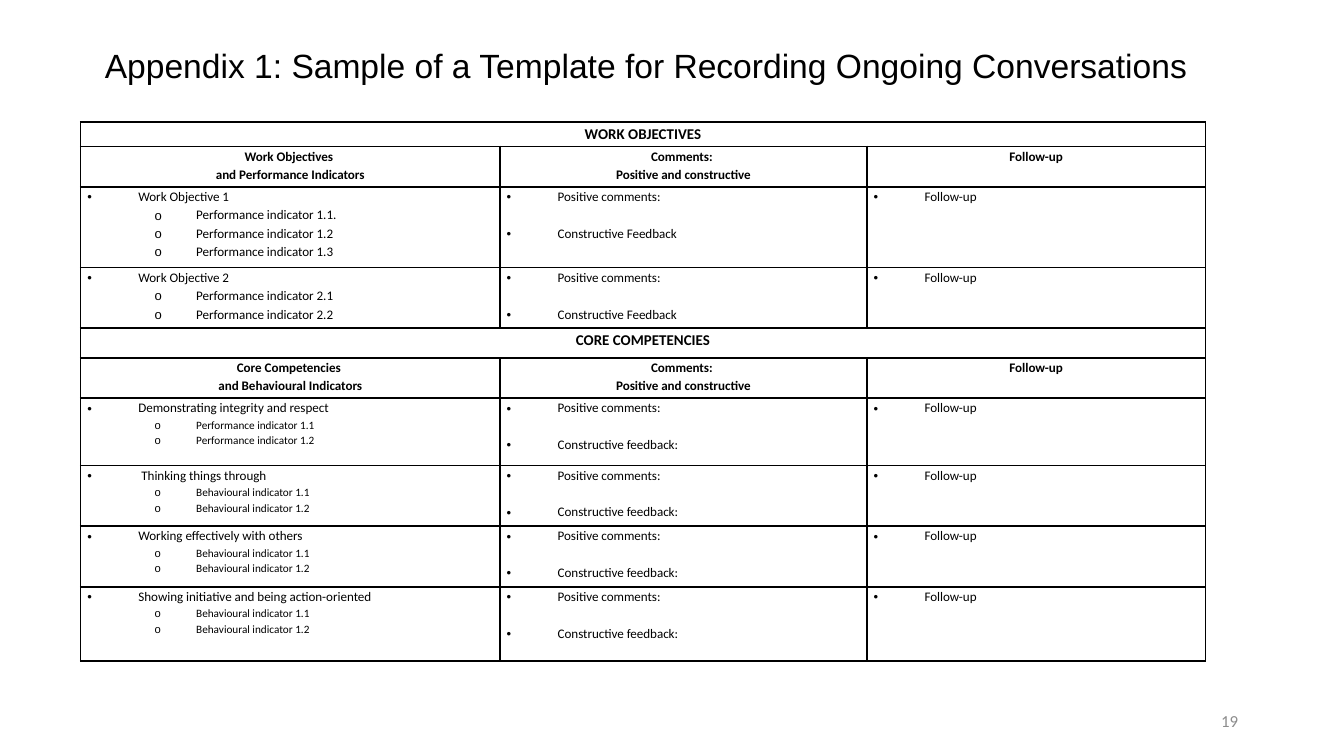
"""Build a slide with a template table for recording ongoing conversations."""
from dataclasses import dataclass

from lxml import etree
from pptx import Presentation
from pptx.dml.color import RGBColor
from pptx.enum.text import MSO_ANCHOR, MSO_AUTO_SIZE, PP_ALIGN
from pptx.oxml.ns import qn
from pptx.util import Inches, Pt

LEFT, CENTER, RIGHT = PP_ALIGN.LEFT, PP_ALIGN.CENTER, PP_ALIGN.RIGHT
MIDDLE = MSO_ANCHOR.MIDDLE
NO_AUTOFIT = MSO_AUTO_SIZE.NONE
TITLE_ONLY = 5


@dataclass(frozen=True)
class Theme:
    """Colours, fonts and type sizes of the slide."""
    ink: str = "000000"
    muted: str = "8C8C8C"
    title_font: str = "Arial"
    body_font: str = "Calibri"
    title: float = 18
    number: float = 9
    section: float = 8
    body: float = 7
    small: float = 6
    border: float = 1
    leading: float = 1.15
    gap: float = 9.8


THEME = Theme()
WIDTH = Inches(10)
HEIGHT = WIDTH * 9 // 16
COLUMNS = (3.12, 2.73, 2.52)
BULLETS = (("•", 0.38, -0.38), ("o", 0.81, -0.31))
BEHAVIOURS = ("Behavioural indicator 1.1", "Behavioural indicator 1.2")
SECTIONS = (
    ("WORK OBJECTIVES", 0.18, ("Work Objectives ", "and Performance Indicators"),
     "Constructive Feedback", THEME.body, (
         ("Work Objective 1", 0.6,
          ("Performance indicator 1.1.", "Performance indicator 1.2", "Performance indicator 1.3")),
         ("Work Objective 2", 0.45,
          ("Performance indicator 2.1", "Performance indicator 2.2")),
     )),
    ("CORE COMPETENCIES", 0.22, ("Core Competencies ", "and Behavioural Indicators"),
     "Constructive feedback:", THEME.small, (
         ("Demonstrating integrity and respect", 0.5,
          ("Performance indicator 1.1", "Performance indicator 1.2")),
         (" Thinking things through", 0.45, BEHAVIOURS),
         ("Working effectively with others", 0.45, BEHAVIOURS),
         ("Showing initiative and being action-oriented", 0.55, BEHAVIOURS),
     )),
)
HEADING_HEIGHT = 0.3


def add_span(para, text, size, bold=False, font=THEME.body_font, colour=THEME.ink):
    """Add one formatted run to a paragraph."""
    span = para.add_run()
    span.text = text
    span.font.name = font
    span.font.size = Pt(size)
    span.font.bold = bold
    span.font.color.rgb = RGBColor.from_string(colour)


def next_para(frame):
    """Return the empty first paragraph of a frame, or a new one."""
    first = frame.paragraphs[0]
    return frame.add_paragraph() if first.runs else first


def add_heading(cell, lines, size):
    """Fill a cell with centred bold lines."""
    for line in lines:
        para = next_para(cell.text_frame)
        para.alignment = CENTER
        para.line_spacing = THEME.leading
        add_span(para, line, size, bold=True)


def add_item(cell, text, level=0, size=THEME.body, gap=0):
    """Add a bulleted item to a cell."""
    mark, margin, indent = BULLETS[level]
    para = next_para(cell.text_frame)
    para.level = level
    para.alignment = LEFT
    props = para._p.get_or_add_pPr()
    props.set("marL", str(Inches(margin)))
    props.set("indent", str(Inches(indent)))
    etree.SubElement(props, qn("a:buFont"), typeface=THEME.title_font)
    etree.SubElement(props, qn("a:buChar"), char=mark)
    para.line_spacing = THEME.leading
    para.space_before = Pt(gap)
    add_span(para, text, size)


def format_cell(cell):
    """Give a cell its margins, borders and clear fill."""
    cell.margin_left = cell.margin_right = Inches(0.05)
    cell.margin_top = cell.margin_bottom = 0
    props = cell._tc.get_or_add_tcPr()
    for side in ("a:lnL", "a:lnR", "a:lnT", "a:lnB"):
        line = etree.SubElement(props, qn(side), w=str(Pt(THEME.border)))
        fill = etree.SubElement(line, qn("a:solidFill"))
        etree.SubElement(fill, qn("a:srgbClr"), val=THEME.ink)
    cell.fill.background()


def fill_section(rows, section):
    """Fill the next rows of the table with one section."""
    name, _, heading, feedback, detail_size, entries = section
    banner = next(rows).cells
    banner[0].merge(banner[len(COLUMNS) - 1])
    add_heading(banner[0], (name,), THEME.section)
    headings = (heading, ("Comments: ", "Positive and constructive"), ("Follow-up",))
    for cell, lines in zip(next(rows).cells, headings):
        add_heading(cell, lines, THEME.body)
    for topic, _, indicators in entries:
        topic_cell, comment_cell, follow_cell = next(rows).cells
        add_item(topic_cell, topic)
        for indicator in indicators:
            add_item(topic_cell, indicator, level=1, size=detail_size)
        add_item(comment_cell, "Positive comments:")
        add_item(comment_cell, feedback, gap=THEME.gap)
        add_item(follow_cell, "Follow-up")


def add_record_table(page, left, top, width, height):
    """Place the recording table in the given box."""
    heights = []
    for _, banner_height, _, _, _, entries in SECTIONS:
        heights += [banner_height, HEADING_HEIGHT, *(entry[1] for entry in entries)]
    table = page.shapes.add_table(len(heights), len(COLUMNS), left, top, width, height).table
    table.first_row = table.horz_banding = False
    for column, share in zip(table.columns, COLUMNS):
        column.width = int(width * share / sum(COLUMNS))
    for row, share in zip(table.rows, heights):
        row.height = int(height * share / sum(heights))
    for cell in table.iter_cells():
        format_cell(cell)
    rows = iter(table.rows)
    for section in SECTIONS:
        fill_section(rows, section)


def add_title(page, left, top, width, height):
    """Place the slide title in the given box."""
    box = page.shapes.title
    box.left, box.top, box.width, box.height = left, top, width, height
    frame = box.text_frame
    frame.auto_size = NO_AUTOFIT
    frame.vertical_anchor = MIDDLE
    para = frame.paragraphs[0]
    para.alignment = LEFT
    para.line_spacing = 0.9
    add_span(para, "Appendix 1: Sample of a Template for Recording Ongoing Conversations",
             THEME.title, font=THEME.title_font)


def add_page_number(page, left, top, width, height):
    """Place the page number in the given box."""
    frame = page.shapes.add_textbox(left, top, width, height).text_frame
    frame.word_wrap = True
    frame.vertical_anchor = MIDDLE
    para = frame.paragraphs[0]
    para.alignment = RIGHT
    add_span(para, "19", THEME.number, colour=THEME.muted)


def main():
    """Build and save the deck."""
    deck = Presentation()
    deck.slide_width, deck.slide_height = WIDTH, HEIGHT
    page = deck.slides.add_slide(deck.slide_layouts[TITLE_ONLY])
    add_title(page, Inches(0.68), Inches(0.03), Inches(9.32), Inches(0.94))
    add_record_table(page, Inches(0.6), Inches(0.91), Inches(8.37), Inches(4.01))
    add_page_number(page, Inches(7.06), Inches(5.21), Inches(2.25), Inches(0.3))
    deck.save("out.pptx")


if __name__ == "__main__":
    main()
